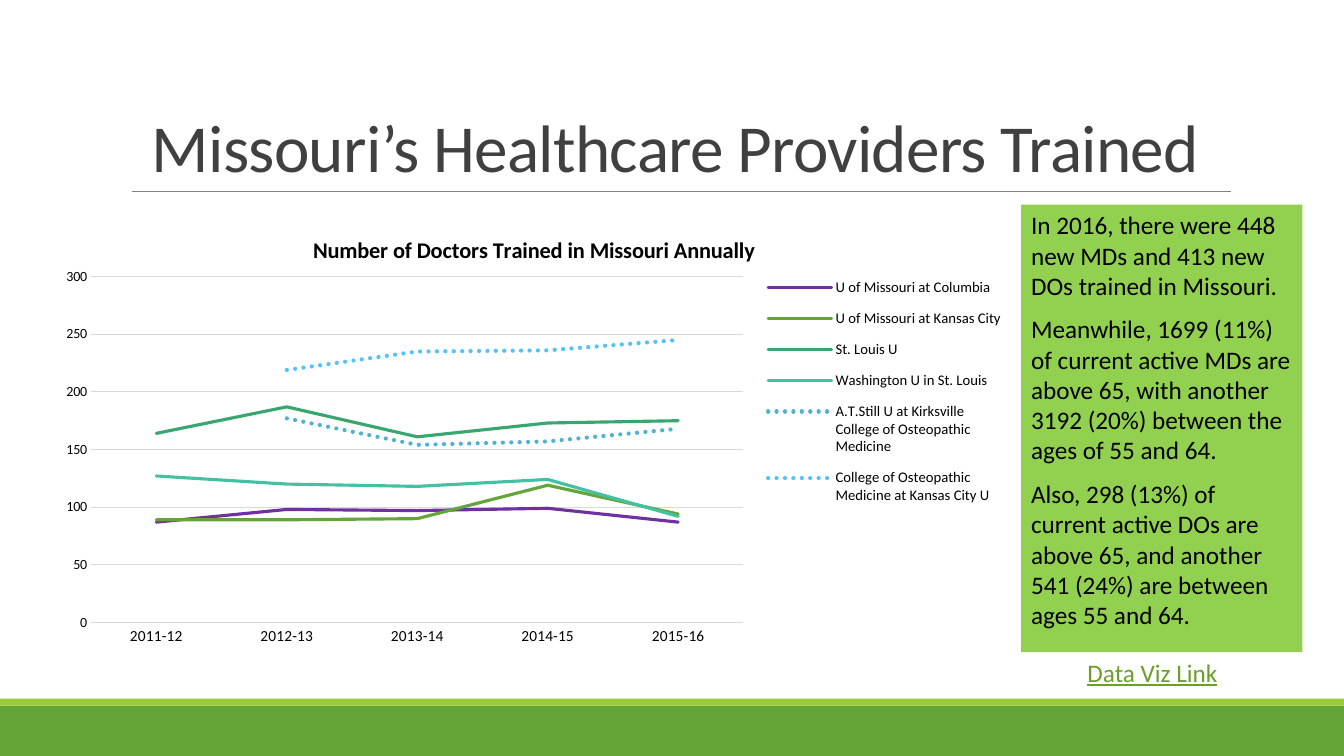
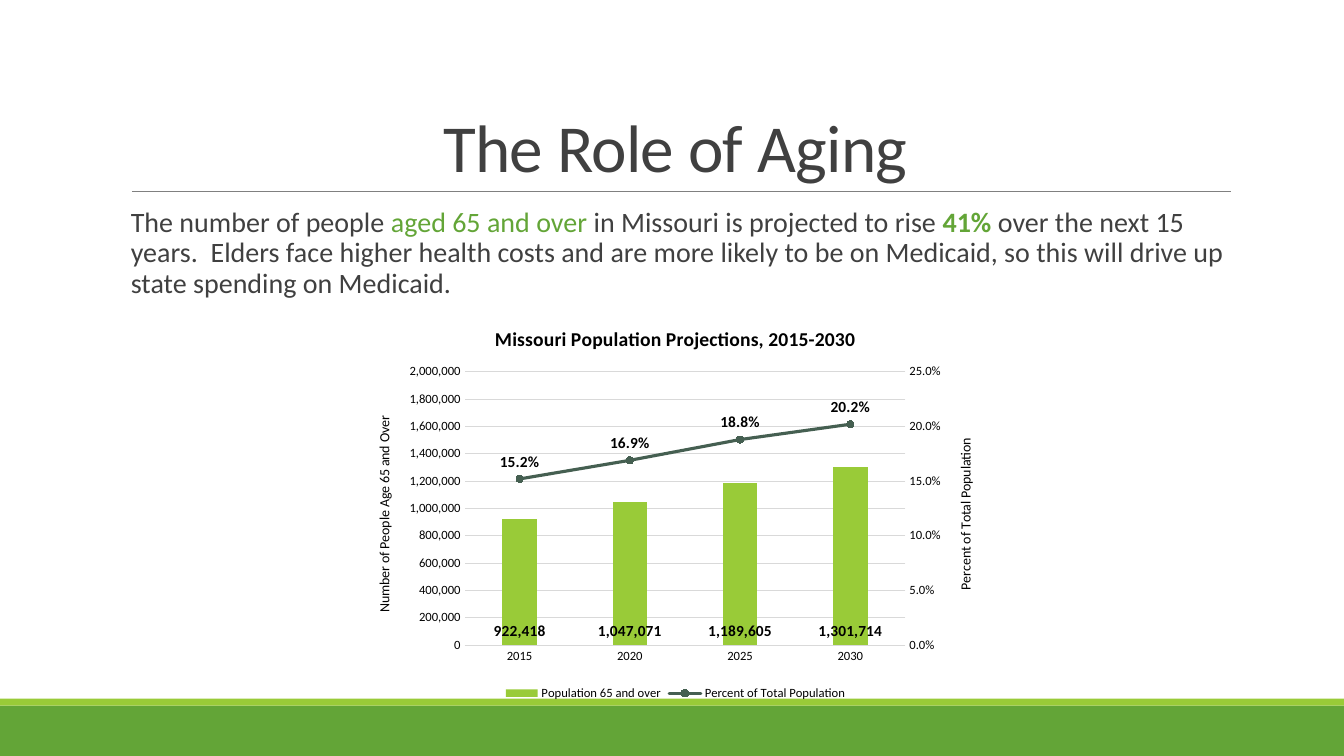
from copy import deepcopy
from dataclasses import dataclass

from lxml import etree
from pptx import Presentation
from pptx.chart.axis import ValueAxis
from pptx.chart.data import CategoryChartData
from pptx.dml.color import RGBColor
from pptx.enum.chart import XL_CHART_TYPE as CT
from pptx.enum.chart import XL_LABEL_POSITION as LP
from pptx.enum.chart import XL_LEGEND_POSITION as LEGEND
from pptx.enum.chart import XL_MARKER_STYLE as MARKER
from pptx.enum.chart import XL_TICK_MARK as TICK
from pptx.enum.dml import MSO_LINE
from pptx.enum.shapes import MSO_CONNECTOR, MSO_SHAPE
from pptx.enum.text import MSO_ANCHOR, PP_ALIGN
from pptx.oxml.ns import qn
from pptx.util import Pt


@dataclass(frozen=True)
class Theme:
    font: str = "Calibri"
    green: str = "63A537"
    lime: str = "99CB38"
    panel: str = "92D050"
    link: str = "6B9F25"
    slate: str = "455F51"
    dark: str = "404040"
    black: str = "000000"
    rule: str = "808080"
    grid: str = "D9D9D9"
    title: float = 48
    body: float = 20
    note: float = 18
    chart: float = 10
    label: float = 11


def rgb(code):
    return RGBColor.from_string(code)


class Deck:
    def __init__(self, theme):
        self.t = theme
        self.prs = Presentation()
        self.prs.slide_width, self.prs.slide_height = Pt(960), Pt(540)
        self.s = None

    # Shared slide furniture
    def new_slide(self, title):
        t = self.t
        self.s = self.prs.slides.add_slide(self.prs.slide_layouts[6])
        self.rect(0, 504, 960, 36, t.green)
        self.rect(0, 499, 960, 5, t.lime)
        self.rule(94.3, 879.1, 136.8)
        tf = self.text_box(86.4, 22.3, 792, 114.5)
        tf.vertical_anchor = MSO_ANCHOR.BOTTOM
        p = tf.paragraphs[0]
        p.alignment, p.line_spacing = PP_ALIGN.CENTER, 0.85
        r = self.run(p, title, t.title, t.dark)
        r.font._element.set("spc", "-50")

    # Basic elements
    def rect(self, x, y, w, h, fill):
        sp = self.s.shapes.add_shape(MSO_SHAPE.RECTANGLE, Pt(x), Pt(y), Pt(w), Pt(h))
        sp.shadow.inherit = False
        sp.fill.solid()
        sp.fill.fore_color.rgb = rgb(fill)
        sp.line.fill.background()
        return sp

    def rule(self, x1, x2, y):
        cx = self.s.shapes.add_connector(
            MSO_CONNECTOR.STRAIGHT, Pt(x1), Pt(y), Pt(x2), Pt(y))
        cx.line.color.rgb = rgb(self.t.rule)
        cx.line.width = Pt(0.5)
        etree.SubElement(cx._element.spPr, qn("a:effectLst"))

    def text_box(self, x, y, w, h, wrap=True):
        tf = self.s.shapes.add_textbox(Pt(x), Pt(y), Pt(w), Pt(h)).text_frame
        tf.word_wrap = wrap
        return tf

    def style(self, font, size, color, bold=False):
        font.name, font.size, font.bold = self.t.font, Pt(size), bold
        font.color.rgb = rgb(color)

    def run(self, p, text, size, color, bold=False):
        r = p.add_run()
        r.text = text
        self.style(r.font, size, color, bold)
        return r

    # Text blocks
    def panel(self, x, y, w, h, paragraphs):
        tf = self.rect(x, y, w, h, self.t.panel).text_frame
        tf.word_wrap, tf.vertical_anchor = True, MSO_ANCHOR.TOP
        for i, text in enumerate(paragraphs):
            p = tf.add_paragraph() if i else tf.paragraphs[0]
            p.alignment, p.space_after = PP_ALIGN.LEFT, Pt(9.6)
            self.run(p, text, self.t.note, self.t.black)

    def caption(self, x, y, w, h, text):
        tf = self.text_box(x, y, w, h, wrap=False)
        r = self.run(tf.paragraphs[0], text, self.t.note, self.t.link)
        r.font.underline = True

    def body(self, x, y, w, h, runs):
        tf = self.text_box(x, y, w, h)
        tf.margin_left, tf.margin_right = Pt(7.2), 0
        p = tf.paragraphs[0]
        p.line_spacing = 0.9
        for text, color, bold in runs:
            self.run(p, text, self.t.body, color, bold)

    # Chart parts
    def layout(self, parent, index, inner=False, **box):
        """Place a chart part by fractions of the chart area."""
        for old in parent.findall(qn("c:layout")):
            parent.remove(old)
        node = etree.Element(qn("c:layout"))
        parent.insert(index, node)
        manual = etree.SubElement(node, qn("c:manualLayout"))
        values = {"layoutTarget": "inner"} if inner else {}
        values.update(xMode="edge", yMode="edge", **box)
        for key, val in values.items():
            etree.SubElement(manual, qn(f"c:{key}")).set("val", str(val))

    def chart(self, kind, box, cats, series, title, title_size, plot, legend, legend_size):
        data = CategoryChartData()
        data.categories = cats
        for name, vals, fmt in series:
            data.add_series(name, vals, fmt)
        ch = self.s.shapes.add_chart(kind, *map(Pt, box), data).chart
        self.style(ch.font, self.t.chart, self.t.black)
        ch.has_title = True
        self.run(ch.chart_title.text_frame.paragraphs[0], title,
                 title_size, self.t.black, True)
        ch.has_legend = True
        ch.legend.position, ch.legend.include_in_layout = legend, False
        self.style(ch.legend.font, legend_size, self.t.black)
        ch.plots[0].vary_by_categories = False
        area = ch._chartSpace.chart.plotArea
        self.layout(area, 0, inner=True, **plot)
        return ch

    def axis(self, ax, size, line=False):
        ax.major_tick_mark = ax.minor_tick_mark = TICK.NONE
        self.style(ax.tick_labels.font, size, self.t.black)
        if line:
            ax.format.line.color.rgb = rgb(self.t.grid)
            ax.format.line.width = Pt(0.75)
        else:
            ax.format.line.fill.background()

    def value_axis(self, ax, size, top, step, fmt, title=None, grid=True):
        self.axis(ax, size)
        ax.minimum_scale, ax.maximum_scale, ax.major_unit = 0, top, step
        ax.tick_labels.number_format = fmt
        ax.tick_labels.number_format_is_linked = False
        ax.has_major_gridlines = grid
        if grid:
            ax.major_gridlines.format.line.color.rgb = rgb(self.t.grid)
            ax.major_gridlines.format.line.width = Pt(0.75)
        if title:
            tf = ax.axis_title.text_frame
            tf._txBody.bodyPr.set("rot", "-5400000")
            self.run(tf.paragraphs[0], title, self.t.chart, self.t.black)

    def series_line(self, ser, color, width=2.25, dotted=False):
        ser.smooth = False
        line = ser.format.line
        line.color.rgb, line.width = rgb(color), Pt(width)
        if dotted:
            line.dash_style = MSO_LINE.ROUND_DOT
        line._get_or_add_ln().set("cap", "rnd")

    def labels(self, ser, fmt, position):
        dl = ser.data_labels
        dl.show_value, dl.position = True, position
        dl.number_format, dl.number_format_is_linked = fmt, False
        self.style(dl.font, self.t.label, self.t.black, True)

    def split_axes(self, ch):
        """Make the last column series a line on a right axis; return left, right."""
        area = ch._chartSpace.chart.plotArea
        bar = area.find(qn("c:barChart"))
        ser = bar.findall(qn("c:ser"))[-1]
        for node in ser.findall(qn("c:invertIfNegative")):
            ser.remove(node)
        line = etree.Element(qn("c:lineChart"))
        bar.addnext(line)
        for tag, val in (("grouping", "standard"), ("varyColors", "0")):
            etree.SubElement(line, qn(f"c:{tag}")).set("val", val)
        line.append(ser)
        for tag, val in (("marker", "1"), ("axId", "5001"), ("axId", "5002")):
            etree.SubElement(line, qn(f"c:{tag}")).set("val", val)
        cat, val = area.find(qn("c:catAx")), area.find(qn("c:valAx"))
        cat2, val2 = deepcopy(cat), deepcopy(val)
        val.addnext(val2)
        val2.addnext(cat2)
        changes = ((cat2, dict(axId="5001", crossAx="5002", delete="1")),
                   (val2, dict(axId="5002", crossAx="5001", axPos="r", crosses="max")))
        for node, values in changes:
            for tag, new in values.items():
                node.find(qn(f"c:{tag}")).set("val", new)
        return ValueAxis(val), ValueAxis(val2)


def doctors_slide(d):
    t = d.t
    d.new_slide("Missouri’s Healthcare Providers Trained")
    # Name, values, colour, dotted
    schools = [
        ("U of Missouri at Columbia", (87, 98, 97, 99, 87), "7030A0", False),
        ("U of Missouri at Kansas City", (89, 89, 90, 119, 94), t.green, False),
        ("St. Louis U", (164, 187, 161, 173, 175), "37A76F", False),
        ("Washington U in St. Louis", (127, 120, 118, 124, 92), "44C1A3", False),
        ("A.T.Still U at Kirksville College of Osteopathic Medicine",
         (None, 177, 154, 157, 168), "4EB3CF", True),
        ("College of Osteopathic Medicine at Kansas City U",
         (None, 219, 235, 236, 245), "51C3F9", True),
    ]
    ch = d.chart(
        CT.LINE, (33.8, 154.8, 695.5, 316.8),
        ["2011-12", "2012-13", "2013-14", "2014-15", "2015-16"],
        [(name, vals, "General") for name, vals, *_ in schools],
        "Number of Doctors Trained in Missouri Annually", 16,
        dict(x=0.045, y=0.135, w=0.67, h=0.78), LEGEND.RIGHT, 10.5)
    d.layout(ch.legend._element, 1, x=0.74, y=0.11, w=0.24, h=0.57)
    d.axis(ch.category_axis, t.label, line=True)
    d.value_axis(ch.value_axis, t.chart, 300, 50, "General")
    for ser, (_, _, color, dotted) in zip(ch.plots[0].series, schools):
        d.series_line(ser, color, 3 if dotted else 2.25, dotted)
    d.panel(729.4, 146.2, 200.9, 319.7, [
        "In 2016, there were 448 new MDs and 413 new DOs trained in Missouri.",
        "Meanwhile, 1699 (11%) of current active MDs are above 65, with another "
        "3192 (20%) between the ages of 55 and 64.",
        "Also, 298 (13%) of current active DOs are above 65, and another "
        "541 (24%) are between ages 55 and 64.",
    ])
    d.caption(769.7, 465.8, 108.7, 28.8, "Data Viz Link")


def aging_slide(d):
    t = d.t
    d.new_slide("The Role of Aging")
    d.body(86.4, 145.4, 792, 72, [
        ("The number of people ", t.dark, False),
        ("aged 65 and over ", t.green, False),
        ("in Missouri is projected to rise ", t.dark, False),
        ("41% ", t.green, True),
        ("over the next 15 years.  Elders face higher health costs and are more "
         "likely to be on Medicaid, so this will drive up state spending on "
         "Medicaid.", t.dark, False),
    ])
    ch = d.chart(
        CT.COLUMN_CLUSTERED, (254.2, 220.3, 456.5, 283),
        ["2015", "2020", "2025", "2030"],
        [("Population 65 and over", (922418, 1047071, 1189605, 1301714), "#,##0"),
         ("Percent of Total Population", (0.152, 0.169, 0.188, 0.202), "0.0%")],
        "Missouri Population Projections, 2015-2030", 14,
        dict(x=0.17, y=0.16, w=0.69, h=0.69), LEGEND.BOTTOM, 9)
    left, right = d.split_axes(ch)
    d.axis(ch.category_axis, 9, line=True)
    d.value_axis(left, 9, 2000000, 200000, "#,##0", "Number of People Age 65 and Over")
    d.value_axis(right, 9, 0.25, 0.05, "0.0%", "Percent of Total Population", grid=False)
    columns, line = ch.plots
    columns.gap_width = 219
    people, percent = columns.series[0], line.series[0]
    people.format.fill.solid()
    people.format.fill.fore_color.rgb = rgb(t.lime)
    d.labels(people, "#,##0", LP.INSIDE_BASE)
    d.series_line(percent, t.slate)
    percent.marker.style, percent.marker.size = MARKER.CIRCLE, 5
    percent.marker.format.fill.solid()
    percent.marker.format.fill.fore_color.rgb = rgb(t.slate)
    percent.marker.format.line.color.rgb = rgb(t.slate)
    d.labels(percent, "0.0%", LP.ABOVE)


def main():
    d = Deck(Theme())
    doctors_slide(d)
    aging_slide(d)
    d.prs.save("out.pptx")


if __name__ == "__main__":
    main()
